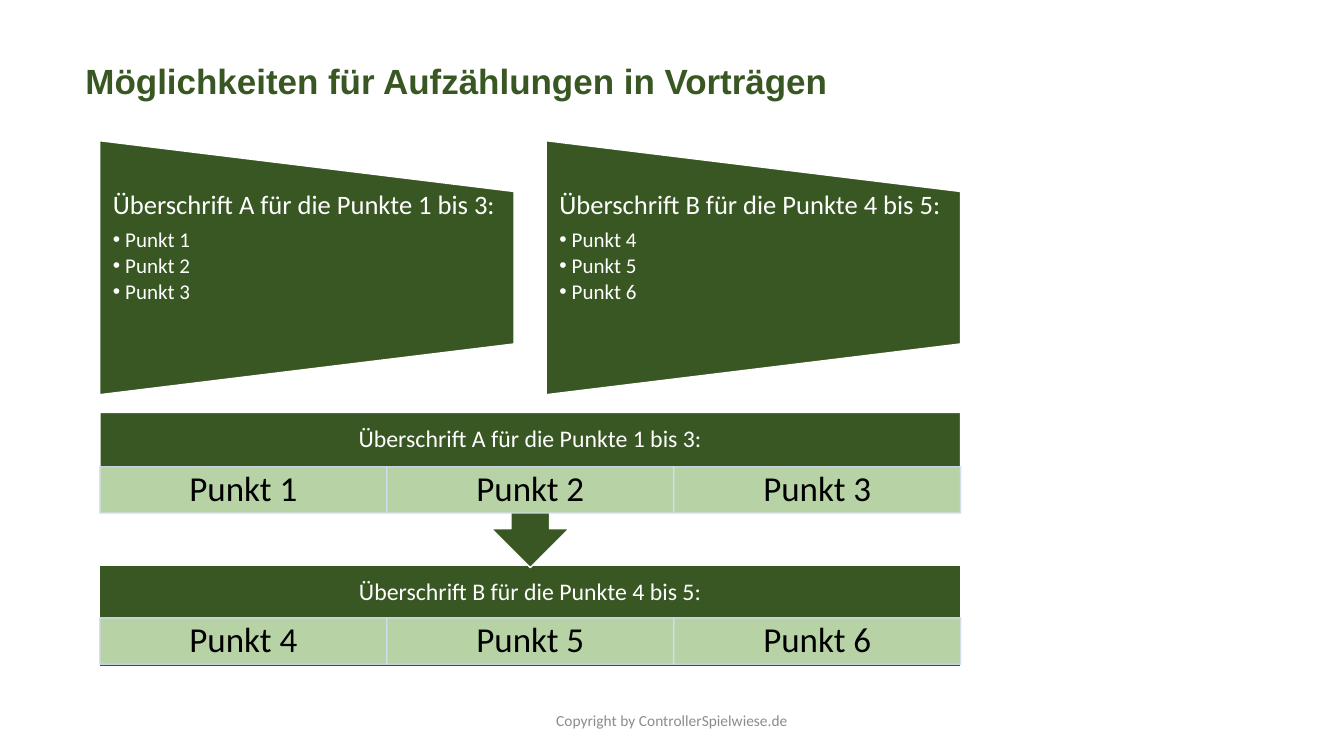
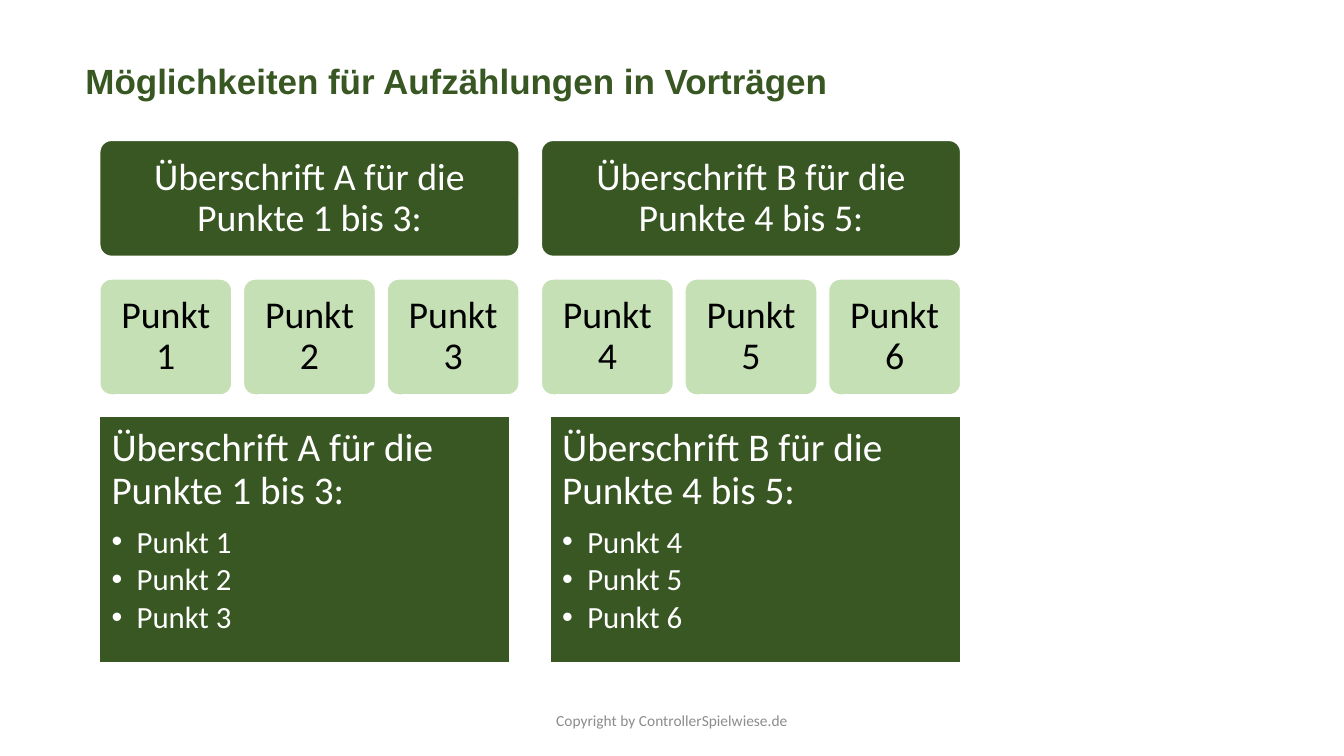
from lxml import etree
from pptx import Presentation
from pptx.dml.color import RGBColor
from pptx.enum import shapes, text
from pptx.oxml import ns
from pptx.util import Pt

DARK, LIGHT, PALE = "385723", "C5E0B4", "D2DEEF"
WHITE, BLACK, GREY = "FFFFFF", "000000", "8C8C8C"
LEFT, TOTAL = 71.3, 614.9  # content area shared by both slides
TITLE = "Möglichkeiten für Aufzählungen in Vorträgen"
FOOTER = "Copyright by ControllerSpielwiese.de"
SECTIONS = [
    ("Überschrift A für die Punkte 1 bis 3:", ["Punkt 1", "Punkt 2", "Punkt 3"]),
    ("Überschrift B für die Punkte 4 bis 5:", ["Punkt 4", "Punkt 5", "Punkt 6"]),
]
KIND = shapes.MSO_SHAPE
TOP, MIDDLE = text.MSO_ANCHOR.TOP, text.MSO_ANCHOR.MIDDLE
START, CENTER = text.PP_ALIGN.LEFT, text.PP_ALIGN.CENTER


def panel(slide, kind, x, y, w, h, fill, line=WHITE, opacity=100):
    shape = slide.shapes.add_shape(kind, Pt(x), Pt(y), Pt(w), Pt(h))
    shape.shadow.inherit = False
    shape.fill.solid()
    shape.fill.fore_color.rgb = RGBColor.from_string(fill)
    shape.line.color.rgb = RGBColor.from_string(line)
    shape.line.width = Pt(1)
    if opacity < 100:
        for color in shape._element.spPr.iter(ns.qn("a:srgbClr")):
            etree.SubElement(color, ns.qn("a:alpha"), val=str(opacity * 1000))
    return shape


def write(shape, heading, size, color, points=(), point_size=0, indent=0,
          align=CENTER, anchor=MIDDLE, inset=(7.2, 3.6), font="Calibri",
          bold=False, spacing=0.9):
    frame = shape.text_frame
    frame.word_wrap = True
    frame.vertical_anchor = anchor
    frame.margin_left = frame.margin_right = Pt(inset[0])
    frame.margin_top = frame.margin_bottom = Pt(inset[1])
    frame.text = "\n".join([heading, *points])
    for number, paragraph in enumerate(frame.paragraphs):
        is_point = number > 0
        paragraph.alignment = align
        paragraph.line_spacing = spacing
        letter = point_size if is_point else size
        paragraph.space_after = Pt(round(letter * (0.15 if is_point else 0.35), 1))
        if is_point:
            paragraph.level = 1
            properties = paragraph._p.get_or_add_pPr()
            properties.set("marL", str(Pt(indent)))
            properties.set("indent", str(-Pt(indent)))
            etree.SubElement(properties, ns.qn("a:buFont"), typeface="Arial")
            etree.SubElement(properties, ns.qn("a:buChar"), char="•")
        for run in paragraph.runs:
            run.font.size = Pt(letter)
            run.font.name = font
            run.font.bold = bold
            run.font.color.rgb = RGBColor.from_string(color)


deck = Presentation()
deck.slide_width, deck.slide_height = Pt(960), Pt(540)

# Title and footer on both slides
for _ in range(2):
    slide = deck.slides.add_slide(deck.slide_layouts[6])
    title = slide.shapes.add_textbox(Pt(54), Pt(39), Pt(679), Pt(37.4))
    write(title, TITLE, 25, DARK, align=START, anchor=TOP, font="Arial",
          bold=True, spacing=1.0)
    footer = slide.shapes.add_textbox(Pt(318), Pt(500.4), Pt(324), Pt(28.8))
    write(footer, FOOTER, 11, GREY, spacing=1.0)
bands, tiles = deck.slides

# Slide 1: trapezoids, narrow side to the right
trap_w, trap_h, trap_top = 296, 181.4, 100.5
for column, (heading, points) in enumerate(SECTIONS):
    x = LEFT + column * (TOTAL - trap_w)
    trapezoid = panel(bands, KIND.FLOWCHART_MANUAL_OPERATION,
                      x + (trap_w - trap_h) / 2, trap_top + (trap_h - trap_w) / 2,
                      trap_h, trap_w, DARK)
    trapezoid.rotation = 270
    label = bands.shapes.add_textbox(Pt(x), Pt(136.8), Pt(trap_w), Pt(108.7))
    write(label, heading, 19, WHITE, points, 15, 8.8, START, TOP, (9.4, 0))

# Slide 1: stacked bands, the lower one drawn first so the arrow lies on top
cell_w = TOTAL / 3
for (heading, points), kind, turn, y, h, cell_y in [
    (SECTIONS[1], KIND.RECTANGLE, 0, 404, 72, 441.4),
    (SECTIONS[0], KIND.UP_ARROW_CALLOUT, 180, 294.5, 110.9, 333.4),
]:
    panel(bands, kind, LEFT, y, TOTAL, h, DARK).rotation = turn
    label = bands.shapes.add_textbox(Pt(LEFT), Pt(y), Pt(TOTAL), Pt(38.9))
    write(label, heading, 17, WHITE, inset=(9.4, 9.4))
    for column, point in enumerate(points):
        cell = panel(bands, KIND.RECTANGLE, LEFT + column * cell_w, cell_y,
                     cell_w, 33.1, LIGHT, PALE, 90)
        write(cell, point, 25, BLACK, inset=(13.7, 2.2))

# Slide 2: heading tiles over point tiles, then list boxes
head_w, tile_w, tile_h, list_w = 299.5, 94.3, 82.8, 293
tile_step = (head_w - tile_w) / 2
for column, (heading, points) in enumerate(SECTIONS):
    x = LEFT + column * (TOTAL - head_w)
    row = [(heading, x, 100.3, head_w, DARK, WHITE)]
    row += [(point, x + i * tile_step, 199.3, tile_w, LIGHT, BLACK)
            for i, point in enumerate(points)]
    for wording, tile_x, y, w, fill, color in row:
        tile = panel(tiles, KIND.ROUNDED_RECTANGLE, tile_x, y, w, tile_h, fill)
        tile.adjustments[0] = 0.1
        write(tile, wording, 27, color, inset=(8, 8))

    list_box = panel(tiles, KIND.RECTANGLE, LEFT + column * (TOTAL - list_w),
                     297.4, list_w, 175.7, DARK)
    write(list_box, heading, 28, WHITE, points, 22, 18, START, TOP, (8.4, 8.4))

deck.save("out.pptx")
